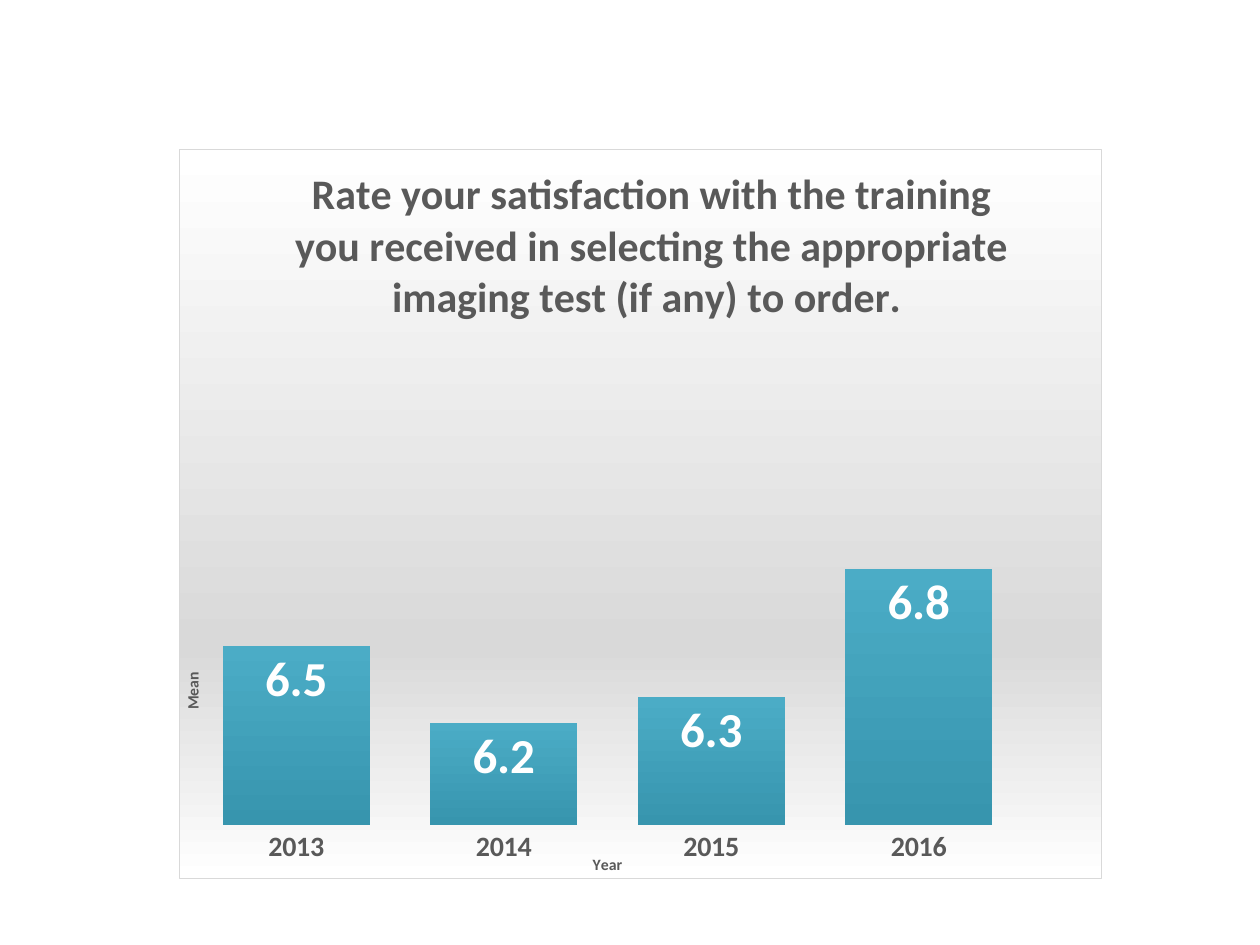
from lxml import etree
from pptx import Presentation
from pptx.chart.data import CategoryChartData
from pptx.dml.color import RGBColor
from pptx.enum import chart as ch
from pptx.oxml import parse_xml
from pptx.oxml.ns import nsdecls, qn
from pptx.util import Inches, Pt

FONT = "Calibri"
COLORS = {
    "text": "595959", "label": "FFFFFF", "border": "D9D9D9",
    "light": "FFFFFF", "shade": "D9D9D9",
    "bar_top": "4BACC6", "bar_bottom": "3795AE",
}
MEANS = {"2013": 6.5, "2014": 6.2, "2015": 6.3, "2016": 6.8}


def style_font(font, size, color="text", bold=True):
    values = {"name": FONT, "size": Pt(size), "bold": bold}
    for name, value in values.items():
        setattr(font, name, value)
    font.color.rgb = RGBColor.from_string(COLORS[color])


def set_title(title, words, size):
    r = title.text_frame.paragraphs[0].add_run()
    r.text = words
    style_font(r.font, size)


def vertical_gradient(stops):
    """Gradient fill from top to bottom; stops are (percent, colour name)."""
    gs = "".join(
        f'<a:gs pos="{pos * 1000}"><a:srgbClr val="{COLORS[name]}"/></a:gs>'
        for pos, name in stops)
    return parse_xml(
        f'<a:gradFill {nsdecls("a")} rotWithShape="1"><a:gsLst>{gs}</a:gsLst>'
        '<a:lin ang="5400000" scaled="0"/></a:gradFill>')


def manual_layout(**parts):
    """Layout with positions given as fractions of the chart."""
    layout = parse_xml(f'<c:layout {nsdecls("c")}><c:manualLayout/></c:layout>')
    for name, value in parts.items():
        etree.SubElement(layout[0], qn("c:" + name)).set("val", str(value))
    return layout


def place_title_and_plot(chart):
    title = chart.chart_title._element
    plot_area = chart._chartSpace.find(".//" + qn("c:plotArea"))
    for parent in (title, plot_area):
        for old in parent.findall(qn("c:layout")):
            parent.remove(old)
    title.find(qn("c:tx")).addnext(
        manual_layout(xMode="edge", yMode="edge", x=0.117, y=0.012))
    plot_area.insert(0, manual_layout(
        layoutTarget="inner", xMode="edge", yMode="edge",
        x=0.014, y=0.505, w=0.9, h=0.422))


def set_background(chart):
    sp_pr = parse_xml(
        f'<c:spPr {nsdecls("c", "a")}><a:ln w="{Pt(0.75)}"><a:solidFill>'
        f'<a:srgbClr val="{COLORS["border"]}"/></a:solidFill></a:ln></c:spPr>')
    sp_pr.insert(0, vertical_gradient([(0, "light"), (68, "shade"), (100, "light")]))
    chart._chartSpace.find(qn("c:chart")).addnext(sp_pr)


def add_satisfaction_chart(s, left, top, width, height):
    data = CategoryChartData(number_format="0.0")
    data.categories = list(MEANS)
    data.add_series("Series 1", list(MEANS.values()))
    chart = s.shapes.add_chart(
        ch.XL_CHART_TYPE.COLUMN_CLUSTERED, left, top, width, height, data).chart
    chart.has_legend = False
    chart.font.name, chart.font.size = FONT, Pt(10)
    set_title(chart.chart_title,
              "Rate your satisfaction with the training you received in "
              "selecting the appropriate imaging test (if any) to order. ", 24)
    set_background(chart)
    place_title_and_plot(chart)

    # Axes
    years, means = chart.category_axis, chart.value_axis
    set_title(years.axis_title, "Year", 9)
    set_title(means.axis_title, "Mean", 9)
    style_font(years.tick_labels.font, 16)
    years.major_tick_mark = ch.XL_TICK_MARK.NONE
    years.format.line.fill.background()
    means.minimum_scale, means.maximum_scale = 5.8, 7
    means.has_major_gridlines = False
    means.visible = False

    # Columns and their values
    plot = chart.plots[0]
    plot.gap_width = 41
    plot.vary_by_categories = False
    series = plot.series[0]
    series._element.get_or_add_spPr().insert(
        0, vertical_gradient([(0, "bar_top"), (100, "bar_bottom")]))
    labels = series.data_labels
    values = {"show_value": True, "number_format": "0.0",
              "number_format_is_linked": False,
              "position": ch.XL_LABEL_POSITION.INSIDE_END}
    for name, value in values.items():
        setattr(labels, name, value)
    style_font(labels.font, 28, "label")


def main():
    prs = Presentation()
    prs.slide_width, prs.slide_height = Inches(10), Inches(7.5)
    s = prs.slides.add_slide(prs.slide_layouts[6])
    add_satisfaction_chart(s, Inches(1.42), Inches(1.18), Inches(7.33), Inches(5.8))
    prs.save("out.pptx")


if __name__ == "__main__":
    main()
